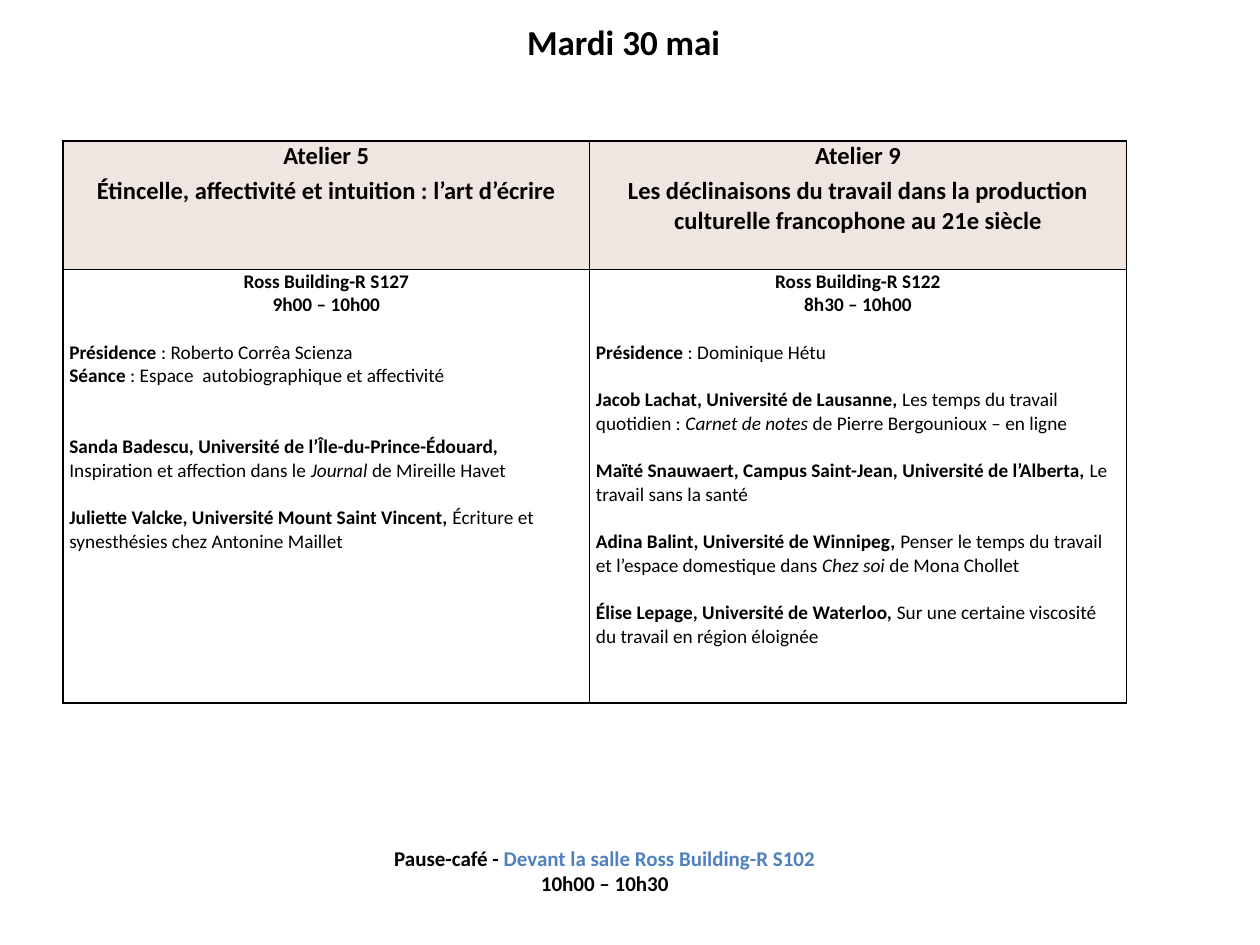
from typing import NamedTuple

from lxml import etree
from pptx import Presentation
from pptx.dml.color import RGBColor
from pptx.enum.text import MSO_ANCHOR, MSO_AUTO_SIZE, PP_ALIGN
from pptx.oxml.ns import qn
from pptx.util import Inches, Pt

CENTER, LEFT = PP_ALIGN.CENTER, PP_ALIGN.LEFT
MIDDLE, BOTTOM = MSO_ANCHOR.MIDDLE, MSO_ANCHOR.BOTTOM
NO_FIT = MSO_AUTO_SIZE.NONE

BLACK = RGBColor(0x00, 0x00, 0x00)
BLUE = RGBColor(0x4F, 0x81, 0xBD)
ROSE = RGBColor(0xEF, 0xE5, 0xE1)
FONT = "Calibri"
GAP = 13.4  # one line of body text, in points


class Entry(NamedTuple):
    bold: str
    plain: str = ""
    work: str = ""
    tail: str = ""
    lines: int = 1  # empty lines above


class Panel(NamedTuple):
    name: str
    theme: str
    room: str
    hours: str
    entries: list[Entry]


PANELS = [
    Panel("Atelier 5", "Étincelle, affectivité et intuition : l’art d’écrire",
          "Ross Building-R S127", "9h00 – 10h00", [
              Entry("Présidence ", ": Roberto Corrêa Scienza"),
              Entry("Séance", " : Espace  autobiographique et affectivité", lines=0),
              Entry("Sanda Badescu, Université de l’Île-du-Prince-Édouard, ",
                    "Inspiration et affection dans le ", "Journal",
                    " de Mireille Havet", lines=2),
              Entry("Juliette Valcke, Université Mount Saint Vincent, ",
                    "Écriture et synesthésies chez Antonine Maillet"),
          ]),
    Panel("Atelier 9", "Les déclinaisons du travail dans la production "
          "culturelle francophone au 21e siècle",
          "Ross Building-R S122", "8h30 – 10h00", [
              Entry("Présidence ", ": Dominique Hétu"),
              Entry("Jacob Lachat, Université de Lausanne, ",
                    "Les temps du travail quotidien : ", "Carnet de notes ",
                    "de Pierre Bergounioux – en ligne"),
              Entry("Maïté Snauwaert, Campus Saint-Jean, Université de l’Alberta, ",
                    "Le travail sans la santé"),
              Entry("Adina Balint, Université de Winnipeg, ",
                    "Penser le temps du travail et l’espace domestique dans ",
                    "Chez soi ", "de Mona Chollet"),
              Entry("Élise Lepage, Université de Waterloo, ",
                    "Sur une certaine viscosité du travail en région éloignée"),
          ]),
]


def add_line(frame, text: str, size: float, align=CENTER, bold: bool = True):
    """Fill the empty first paragraph, or append a new one."""
    para = frame.paragraphs[0]
    if para.runs:
        para = frame.add_paragraph()
    para.add_run().text = text
    para.alignment = align
    para.space_before = Pt(0)
    font = para.font
    font.name, font.size, font.bold = FONT, Pt(size), bold
    font.color.rgb = BLACK
    return para


def add_entry(frame, entry: Entry) -> None:
    para = add_line(frame, entry.bold, 11, LEFT, False)
    para.space_before = Pt(GAP * entry.lines)
    para.runs[0].font.bold = True
    for text in (entry.plain, entry.work, entry.tail):
        if text:
            run = para.add_run()
            run.text = text
            if text == entry.work:
                run.font.italic = True


def style_cell(cell) -> None:
    """Set narrow margins and black borders."""
    cell.margin_left = cell.margin_right = Inches(0.05)
    cell.margin_top = cell.margin_bottom = 0
    props = cell._tc.get_or_add_tcPr()
    for side in ("lnL", "lnR", "lnT", "lnB"):
        line = etree.SubElement(props, qn(f"a:{side}"), w=str(Pt(1)))
        fill = etree.SubElement(line, qn("a:solidFill"))
        etree.SubElement(fill, qn("a:srgbClr"), val=str(BLACK))


def add_panel(table, col: int, panel: Panel) -> None:
    head, body = table.cell(0, col), table.cell(1, col)
    for cell in (head, body):
        style_cell(cell)
    head.fill.solid()
    head.fill.fore_color.rgb = ROSE
    body.fill.background()
    for text in (panel.name, panel.theme):
        add_line(head.text_frame, text, 14).space_after = Pt(3)
    for text in (panel.room, panel.hours):
        add_line(body.text_frame, text, 11)
    for entry in panel.entries:
        add_entry(body.text_frame, entry)


def main() -> None:
    deck = Presentation()
    deck.slide_width, deck.slide_height = Inches(10), Inches(7.5)
    slide = deck.slides.add_slide(deck.slide_layouts[5])

    # Day title
    title = slide.shapes.title
    title.left, title.top = Inches(1.68), Inches(0.11)
    title.width, title.height = Inches(6.54), Inches(0.44)
    frame = title.text_frame
    frame.auto_size, frame.vertical_anchor = NO_FIT, MIDDLE
    add_line(frame, "Mardi 30 mai", 20)

    # Parallel sessions
    table = slide.shapes.add_table(2, len(PANELS), Inches(0.5), Inches(1.12),
                                   Inches(8.44), Inches(4.46)).table
    table.first_row = table.horz_banding = False
    for col, width in zip(table.columns, (4.18, 4.26)):
        col.width = Inches(width)
    for row, height in zip(table.rows, (1.02, 3.44)):
        row.height = Inches(height)
    for col, panel in enumerate(PANELS):
        add_panel(table, col, panel)

    # Coffee break
    box = slide.shapes.add_textbox(Inches(-0.2), Inches(6.45), Inches(10), Inches(0.71))
    frame = box.text_frame
    frame.word_wrap, frame.vertical_anchor = True, BOTTOM
    place = add_line(frame, "Pause-café - ", 12).add_run()
    place.text = "Devant la salle Ross Building-R S102"
    place.font.color.rgb = BLUE
    add_line(frame, "10h00 – 10h30", 12)

    deck.save("out.pptx")


if __name__ == "__main__":
    main()
